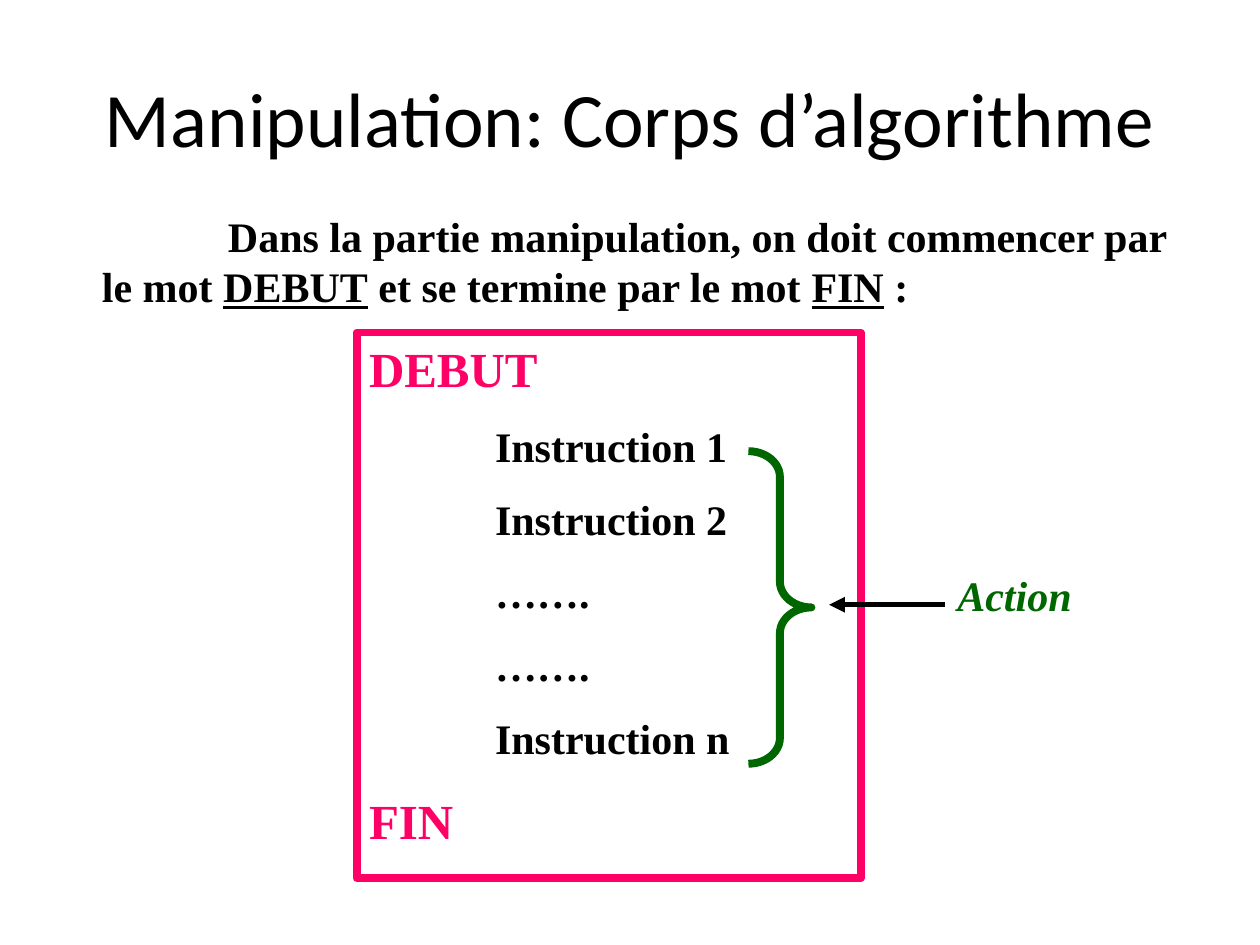
import pptx
import pptx.util
import pptx.dml.color
import pptx.enum.shapes
import pptx.enum.text
import pptx.oxml

Pt = pptx.util.Pt
Shapes = pptx.enum.shapes.MSO_SHAPE
Anchor = pptx.enum.text.MSO_ANCHOR
Align = pptx.enum.text.PP_ALIGN

COLORS = {"text": "000000", "frame": "FF0066", "action": "006600"}
SERIF = "Times New Roman"
INDENT = 72

# Content
TITLE = "Manipulation: Corps d’algorithme"
INTRO = [  # text, underlined
    ("Dans la partie manipulation, on doit commencer par le mot ", False),
    ("DEBUT", True),
    (" et se termine par le mot ", False),
    ("FIN", True),
    (" :", False),
]
INSTRUCTIONS = ["Instruction 1", "Instruction 2", "…….", "…….", "Instruction n"]
ACTION = "Action"


def rgb(name):
    return pptx.dml.color.RGBColor.from_string(COLORS[name])


def style(run, size, color="text", font=SERIF, bold=True):
    run.font.name = font
    run.font.size = Pt(size)
    run.font.bold = bold
    run.font.color.rgb = rgb(color)


def add_text(left, top, width, height):
    frame = slide.shapes.add_textbox(Pt(left), Pt(top), Pt(width), Pt(height)).text_frame
    frame.word_wrap = True
    return frame


def add_outline(preset, left, top, width, height, color):
    outline = slide.shapes.add_shape(preset, Pt(left), Pt(top), Pt(width), Pt(height))
    outline.shadow.inherit = False
    outline.fill.background()
    outline.line.color.rgb = rgb(color)
    outline.line.width = Pt(4.5)
    return outline


def add_xml(parent, tag, **attributes):
    element = pptx.oxml.parse_xml(
        f'<a:{tag} xmlns:a="http://schemas.openxmlformats.org/drawingml/2006/main"/>')
    for key, value in attributes.items():
        element.set(key, value)
    parent.append(element)


deck = pptx.Presentation()
deck.slide_width, deck.slide_height = Pt(720), Pt(540)
slide = deck.slides.add_slide(deck.slide_layouts[5])

# Title
title = slide.shapes.title
title.left, title.top, title.width, title.height = Pt(36), Pt(21.6), Pt(648), Pt(90)
title.text_frame.text = TITLE
title.text_frame.vertical_anchor = Anchor.MIDDLE
heading = title.text_frame.paragraphs[0]
heading.alignment = Align.CENTER
style(heading.runs[0], 44, font="Calibri", bold=False)

# Introductory sentence
intro = add_text(51.2, 116.6, 635.8, 65.5).paragraphs[0]
intro._p.get_or_add_pPr().set("indent", str(Pt(INDENT)))
for words, underlined in INTRO:
    run = intro.add_run()
    run.text = words
    style(run, 24)
    run.font.underline = underlined

# Framed algorithm body
body = add_outline(Shapes.RECTANGLE, 203.8, 190, 288, 311.8, "frame").text_frame
body.word_wrap = True
body.vertical_anchor = Anchor.TOP
body.text = "\n".join(["DEBUT", *INSTRUCTIONS, "FIN"])
for number, line in enumerate(body.paragraphs):
    line.alignment = Align.LEFT
    is_instruction = 0 < number <= len(INSTRUCTIONS)
    if is_instruction:
        line._p.get_or_add_pPr().set("marL", str(Pt(INDENT)))
    if number:
        line.space_before = Pt(13 if is_instruction else 15.5)
    style(line.runs[0], *((24, "text") if is_instruction else (28, "frame")))

# Brace around the instructions
brace = add_outline(Shapes.RIGHT_BRACE, 427.7, 257.8, 36, 178.6, "action")
brace.adjustments[0] = 0.41
brace.adjustments[1] = 0.5

# Action label and its arrow
action = add_text(540, 321.8, 90, 36)
action.text = ACTION
style(action.paragraphs[0].runs[0], 24, "action")
action.paragraphs[0].runs[0].font.italic = True

arrow = slide.shapes.add_connector(
    pptx.enum.shapes.MSO_CONNECTOR.STRAIGHT, Pt(540), Pt(345.6), Pt(473.8), Pt(345.6))
arrow.line.color.rgb = rgb("text")
arrow.line.width = Pt(3)
add_xml(arrow.line._get_or_add_ln(), "tailEnd", type="triangle")
add_xml(arrow._element.spPr, "effectLst")

deck.save("out.pptx")
